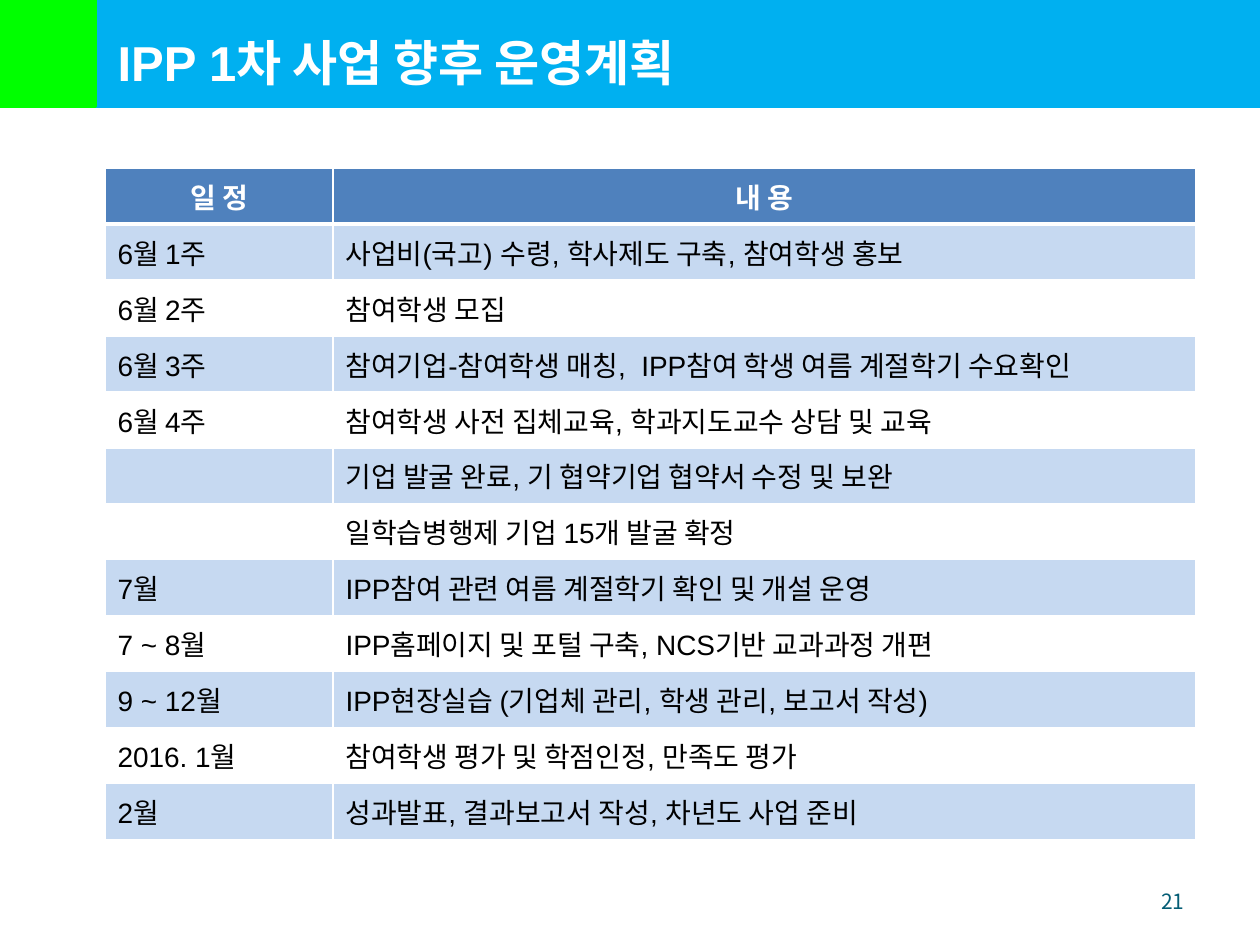
from typing import NamedTuple

from lxml import etree
from pptx import Presentation
from pptx import util as u
from pptx.dml.color import RGBColor
from pptx.enum import shapes, text
from pptx.oxml.ns import qn

PX = u.Inches(1) / 126

WHITE = RGBColor(0xFF, 0xFF, 0xFF)
BLACK = RGBColor(0x00, 0x00, 0x00)
SKY = RGBColor(0x00, 0xB0, 0xF0)
GREEN = RGBColor(0x00, 0xFF, 0x00)
HEADER_BLUE = RGBColor(0x4F, 0x81, 0xBD)
BAND_BLUE = RGBColor(0xC6, 0xD9, 0xF1)
TEAL = RGBColor(0x04, 0x5D, 0x75)

LATIN = "Arial"
KOREAN = "Noto Sans CJK KR"
ROW_HEIGHT = 56
COLUMN_WIDTHS = (228, 863)


class Box(NamedTuple):
    left: int
    top: int
    width: int
    height: int


class Bar(NamedTuple):
    box: Box
    color: RGBColor


class Plan(NamedTuple):
    when: str
    what: str


BARS = (
    Bar(Box(0, 0, 1260, 106), SKY),
    Bar(Box(0, 0, 95, 106), GREEN),
)
PLANS = (
    Plan("일 정", "내 용"),
    Plan("6월 1주", "사업비(국고) 수령, 학사제도 구축, 참여학생 홍보"),
    Plan("6월 2주", "참여학생 모집"),
    Plan("6월 3주", "참여기업-참여학생 매칭,  IPP참여 학생 여름 계절학기 수요확인"),
    Plan("6월 4주", "참여학생 사전 집체교육, 학과지도교수 상담 및 교육"),
    Plan("", "기업 발굴 완료, 기 협약기업 협약서 수정 및 보완"),
    Plan("", "일학습병행제 기업 15개 발굴 확정"),
    Plan("7월", "IPP참여 관련 여름 계절학기 확인 및 개설 운영"),
    Plan("7 ~ 8월", "IPP홈페이지 및 포털 구축, NCS기반 교과과정 개편"),
    Plan("9 ~ 12월", "IPP현장실습 (기업체 관리, 학생 관리, 보고서 작성)"),
    Plan("2016. 1월", "참여학생 평가 및 학점인정, 만족도 평가"),
    Plan("2월", "성과발표, 결과보고서 작성, 차년도 사업 준비"),
)


def px(n: int) -> u.Emu:
    return u.Emu(round(n * PX))


def emu(box: Box) -> list[u.Emu]:
    return [px(n) for n in box]


def style(p, size: int, color: RGBColor, bold: bool = False,
          font: str = LATIN, align=text.PP_ALIGN.LEFT) -> None:
    p.alignment = align
    f = p.font
    f.name, f.size, f.bold = font, u.Pt(size), bold
    f.color.rgb = color


def add_bar(s, bar: Bar) -> None:
    sp = s.shapes.add_shape(shapes.MSO_SHAPE.RECTANGLE, *emu(bar.box))
    sp.shadow.inherit = False
    sp.fill.solid()
    sp.fill.fore_color.rgb = bar.color
    sp.line.color.rgb = bar.color
    sp.line.width = u.Pt(2)


def set_title(s, title: str, box: Box) -> None:
    sp = s.shapes.title
    sp.left, sp.top, sp.width, sp.height = emu(box)
    # Bring the title in front of the bars.
    sp.element.getparent().append(sp.element)
    tf = sp.text_frame
    tf.text = title
    tf.vertical_anchor = text.MSO_ANCHOR.TOP
    tf.auto_size = text.MSO_AUTO_SIZE.NONE
    style(tf.paragraphs[0], 28, WHITE, bold=True)


def set_borders(cell, bottom: int) -> None:
    """Draw white 1 pt edges, with a bottom edge of the given points."""
    pr = cell._tc.get_or_add_tcPr()
    for i, (tag, width) in enumerate(
            (("a:lnL", 1), ("a:lnR", 1), ("a:lnT", 1), ("a:lnB", bottom))):
        ln = etree.Element(qn(tag), w=str(u.Pt(width)))
        fill = etree.SubElement(ln, qn("a:solidFill"))
        etree.SubElement(fill, qn("a:srgbClr"), val=str(WHITE))
        pr.insert(i, ln)


def fill_cell(cell, content: str, row: int) -> None:
    header = row == 0
    cell.text = content
    cell.vertical_anchor = text.MSO_ANCHOR.MIDDLE
    cell.fill.solid()
    cell.fill.fore_color.rgb = (
        HEADER_BLUE if header else BAND_BLUE if row % 2 else WHITE)
    style(cell.text_frame.paragraphs[0], 16, WHITE if header else BLACK,
          bold=header,
          align=text.PP_ALIGN.CENTER if header else text.PP_ALIGN.LEFT)
    set_borders(cell, 3 if header else 1)


def add_schedule(s, left: int, top: int) -> None:
    box = Box(left, top, sum(COLUMN_WIDTHS), ROW_HEIGHT * len(PLANS))
    table = s.shapes.add_table(
        len(PLANS), len(COLUMN_WIDTHS), *emu(box)).table
    for column, width in zip(table.columns, COLUMN_WIDTHS):
        column.width = px(width)
    for i, plan in enumerate(PLANS):
        table.rows[i].height = px(ROW_HEIGHT)
        for j, content in enumerate(plan):
            fill_cell(table.cell(i, j), content, i)


def add_page_number(s, number: int, box: Box) -> None:
    tf = s.shapes.add_textbox(*emu(box)).text_frame
    tf.word_wrap = True
    tf.vertical_anchor = text.MSO_ANCHOR.MIDDLE
    p = tf.paragraphs[0]
    p.text = str(number)
    style(p, 12, TEAL, font=KOREAN, align=text.PP_ALIGN.RIGHT)


def main() -> None:
    prs = Presentation()
    prs.slide_width, prs.slide_height = px(1260), px(945)
    s = prs.slides.add_slide(prs.slide_layouts[5])
    add_schedule(s, 105, 168)
    add_page_number(s, 21, Box(903, 876, 294, 50))
    for bar in BARS:
        add_bar(s, bar)
    set_title(s, "IPP 1차 사업 향후 운영계획", Box(105, 26, 654, 72))
    prs.save("out.pptx")


if __name__ == "__main__":
    main()
